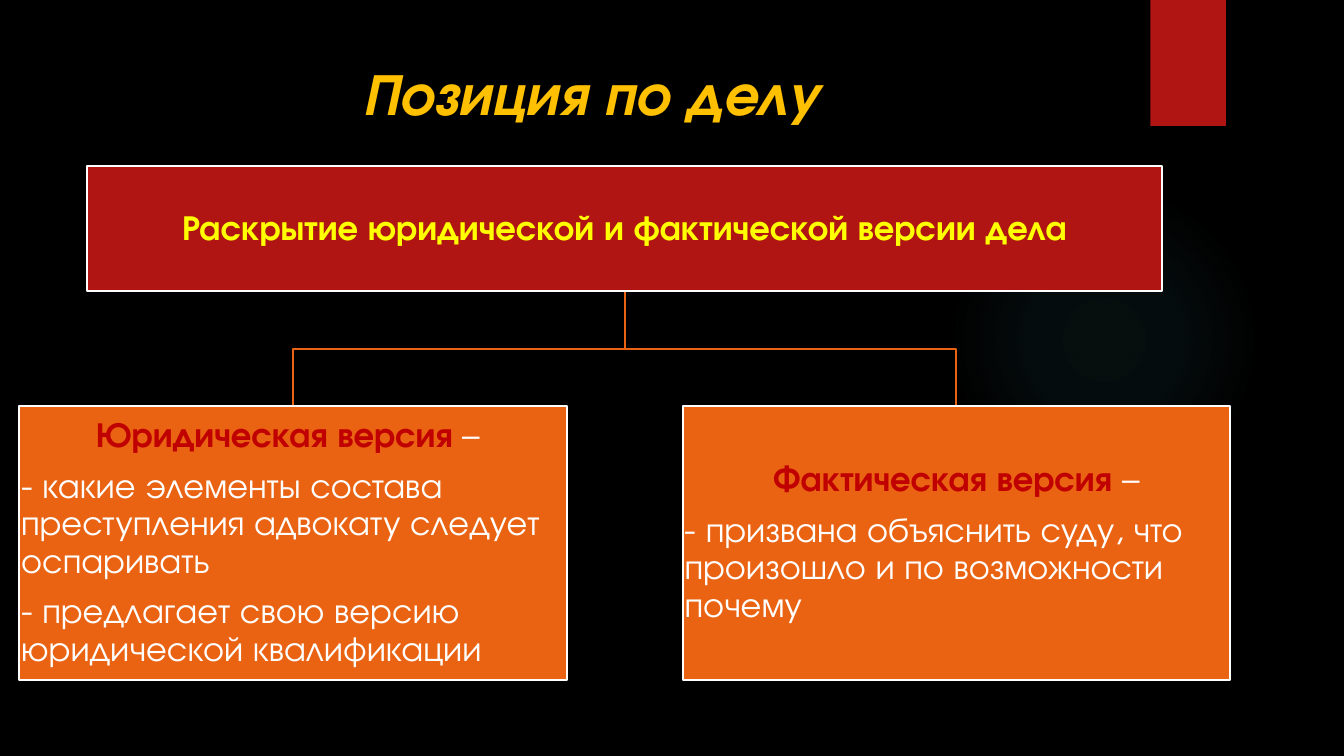
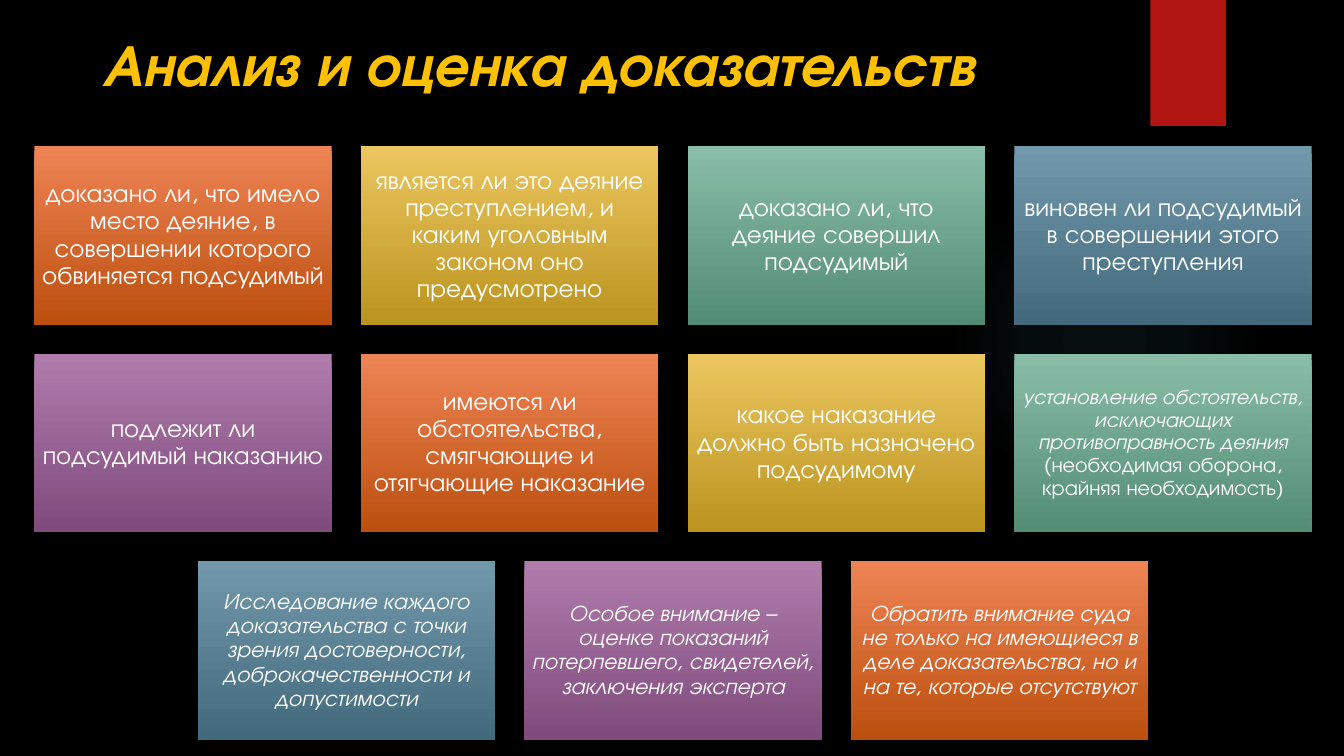
from lxml import etree
from pptx import Presentation
from pptx.dml.color import RGBColor
from pptx.enum.shapes import MSO_SHAPE as SHAPE
from pptx.enum.text import MSO_ANCHOR as ANCHOR, PP_ALIGN as ALIGN
from pptx.oxml.ns import qn
from pptx.util import Inches, Pt

FONT = "TeX Gyre Adventor"
BLACK = RGBColor(0x00, 0x00, 0x00)
WHITE = RGBColor(0xFF, 0xFF, 0xFF)
GOLD = RGBColor(0xFF, 0xC0, 0x00)
YELLOW = RGBColor(0xFF, 0xFF, 0x00)
RED = RGBColor(0xB0, 0x15, 0x13)
DEEP_RED = RGBColor(0xC0, 0x00, 0x00)
ORANGE = RGBColor(0xEA, 0x63, 0x12)
GLOW = RGBColor(0x50, 0xB9, 0xC1)
GLOW_STOPS = [(0, 7), (36, 6), (69, 0)]
CARD_GRADIENTS = [
    (RGBColor(0xEE, 0x84, 0x55), RGBColor(0xBC, 0x4F, 0x0E)),
    (RGBColor(0xEB, 0xC6, 0x5F), RGBColor(0xBB, 0x94, 0x1F)),
    (RGBColor(0x89, 0xBD, 0xA7), RGBColor(0x53, 0x8C, 0x74)),
    (RGBColor(0x71, 0x98, 0xAB), RGBColor(0x43, 0x6A, 0x7C)),
    (RGBColor(0xAF, 0x7C, 0xAC), RGBColor(0x7F, 0x4B, 0x7C)),
]

POSITION_TITLE = "Позиция по делу"
ROOT_TEXT = "Раскрытие юридической и фактической версии дела"
VERSIONS = [
    ("Юридическая версия ", "– ", [
        "- какие элементы состава преступления адвокату следует оспаривать",
        "- предлагает свою версию юридической квалификации",
    ]),
    ("Фактическая версия ", "–", [
        "- призвана объяснить суду, что произошло и по возможности почему",
    ]),
]

EVIDENCE_TITLE = "Анализ и оценка доказательств"
CARDS = [
    (18, [("доказано ли, что имело место деяние, в совершении которого обвиняется подсудимый", False)]),
    (18, [("является ли это деяние преступлением, и каким уголовным законом оно предусмотрено", False)]),
    (18, [("доказано ли, что деяние совершил подсудимый", False)]),
    (18, [("виновен ли подсудимый в совершении этого преступления", False)]),
    (18, [("подлежит ли подсудимый наказанию", False)]),
    (18, [("имеются ли обстоятельства, смягчающие и отягчающие наказание", False)]),
    (18, [("какое наказание должно быть назначено подсудимому", False)]),
    (15, [("установление обстоятельств, исключающих противоправность деяния", True),
          (" (необходимая оборона, крайняя необходимость)", False)]),
    (16, [("Исследование каждого доказательства с точки зрения достоверности, "
           "доброкачественности и допустимости", True)]),
    (16, [("Особое внимание – оценке показаний потерпевшего, свидетелей, заключения эксперта", True)]),
    (16, [("Обратить внимание суда не только на имеющиеся в деле доказательства, "
           "но и на те, которые отсутствуют", True)]),
]
COLUMNS = 4


def add_box(s, kind, x, y, w, h, fill=None, line=None, inset=0.02):
    sp = s.shapes.add_shape(kind, Inches(x), Inches(y), Inches(w), Inches(h))
    sp.shadow.inherit = False
    if fill is not None:
        sp.fill.solid()
        sp.fill.fore_color.rgb = fill
    if line is None:
        sp.line.fill.background()
    else:
        sp.line.color.rgb = line
        sp.line.width = Pt(1.5)
    tf = sp.text_frame
    tf.word_wrap = True
    tf.vertical_anchor = ANCHOR.MIDDLE
    tf.margin_left = tf.margin_right = tf.margin_top = tf.margin_bottom = Inches(inset)
    return sp


def write(p, runs, size, color=WHITE, align=ALIGN.CENTER):
    p.alignment = align
    p.line_spacing = 0.9
    p.font.name = FONT
    p.font.size = Pt(size)
    p.font.color.rgb = color
    for text, style in runs:
        r = p.add_run()
        r.text = text
        for name, value in style.items():
            if name == "color":
                r.font.color.rgb = value
            else:
                setattr(r.font, name, value)


def add_glow(s):
    sp = add_box(s, SHAPE.OVAL, 9.41, 1.83, 3.08, 3.08)
    sp.fill.gradient()
    grad = sp._element.spPr.find(qn("a:gradFill"))
    for child in list(grad):
        grad.remove(child)
    stops = etree.SubElement(grad, qn("a:gsLst"))
    for pos, alpha in GLOW_STOPS:
        stop = etree.SubElement(stops, qn("a:gs"), pos=str(pos * 1000))
        color = etree.SubElement(stop, qn("a:srgbClr"), val=str(GLOW))
        etree.SubElement(color, qn("a:alpha"), val=str(alpha * 1000))
    circle = etree.SubElement(grad, qn("a:path"), path="circle")
    etree.SubElement(circle, qn("a:fillToRect"), l="50000", t="50000", r="50000", b="50000")


def add_slide(prs, title, x, y, h, align):
    s = prs.slides.add_slide(prs.slide_layouts[6])
    add_glow(s)
    add_box(s, SHAPE.RECTANGLE, 11.41, 0, 0.75, 1.25, RED)
    tf = s.shapes.add_textbox(Inches(x), Inches(y), Inches(10.29), Inches(h)).text_frame
    tf.word_wrap = True
    tf.vertical_anchor = ANCHOR.MIDDLE
    p = tf.paragraphs[0]
    p.text = title
    p.alignment = align
    p.font.name = FONT
    p.font.size = Pt(42)
    p.font.bold = p.font.italic = True
    p.font.color.rgb = GOLD
    return s


def add_branch(s, x1, y1, x2, y2):
    middle = (y1 + y2) / 2
    points = [(Inches(x), Inches(y)) for x, y in [(x1, middle), (x2, middle), (x2, y2)]]
    builder = s.shapes.build_freeform(Inches(x1), Inches(y1))
    builder.add_line_segments(points, close=False)
    sp = builder.convert_to_shape()
    sp.shadow.inherit = False
    sp.fill.background()
    sp.line.color.rgb = ORANGE
    sp.line.width = Pt(1.5)


def build_position(prs):
    s = add_slide(prs, POSITION_TITLE, 0.71, 0.5, 0.82, ALIGN.CENTER)
    root_x, root_y, root_w, root_h = 0.86, 1.65, 10.67, 1.24
    left, top, width, height, step = 0.19, 4.03, 5.43, 2.72, 6.58
    for i in range(len(VERSIONS)):
        add_branch(s, root_x + root_w / 2, root_y + root_h, left + i * step + width / 2, top)
    root = add_box(s, SHAPE.RECTANGLE, root_x, root_y, root_w, root_h, RED, WHITE)
    write(root.text_frame.paragraphs[0], [(ROOT_TEXT, {"bold": True})], 25, YELLOW)
    for i, (name, dash, points) in enumerate(VERSIONS):
        box = add_box(s, SHAPE.RECTANGLE, left + i * step, top, width, height, ORANGE, WHITE)
        tf = box.text_frame
        heading = [(name, {"bold": True, "color": DEEP_RED}), (dash, {})]
        write(tf.paragraphs[0], heading, 25)
        for point in points:
            write(tf.add_paragraph(), [(point, {})], 25, align=ALIGN.LEFT)
        for p in tf.paragraphs:
            p.space_after = Pt(9)


def build_evidence(prs):
    s = add_slide(prs, EVIDENCE_TITLE, 0.92, 0.16, 0.94, ALIGN.LEFT)
    left, top, width, height, gap = 0.34, 1.45, 2.95, 1.77, 0.29
    for i, (size, parts) in enumerate(CARDS):
        row, column = divmod(i, COLUMNS)
        in_row = min(COLUMNS, len(CARDS) - row * COLUMNS)
        column += (COLUMNS - in_row) / 2
        card = add_box(s, SHAPE.RECTANGLE, left + column * (width + gap),
                       top + row * (height + gap), width, height, inset=0.07)
        card.fill.gradient()
        card.fill.gradient_angle = 270
        colors = CARD_GRADIENTS[i % len(CARD_GRADIENTS)]
        for stop, color in zip(card.fill.gradient_stops, colors):
            stop.color.rgb = color
        runs = [(text, {"italic": italic}) for text, italic in parts]
        write(card.text_frame.paragraphs[0], runs, size)


def main():
    prs = Presentation()
    prs.slide_width = Inches(13.33)
    prs.slide_height = Inches(7.5)
    background = prs.slide_master.background.fill
    background.solid()
    background.fore_color.rgb = BLACK
    build_position(prs)
    build_evidence(prs)
    prs.save("out.pptx")


if __name__ == "__main__":
    main()
